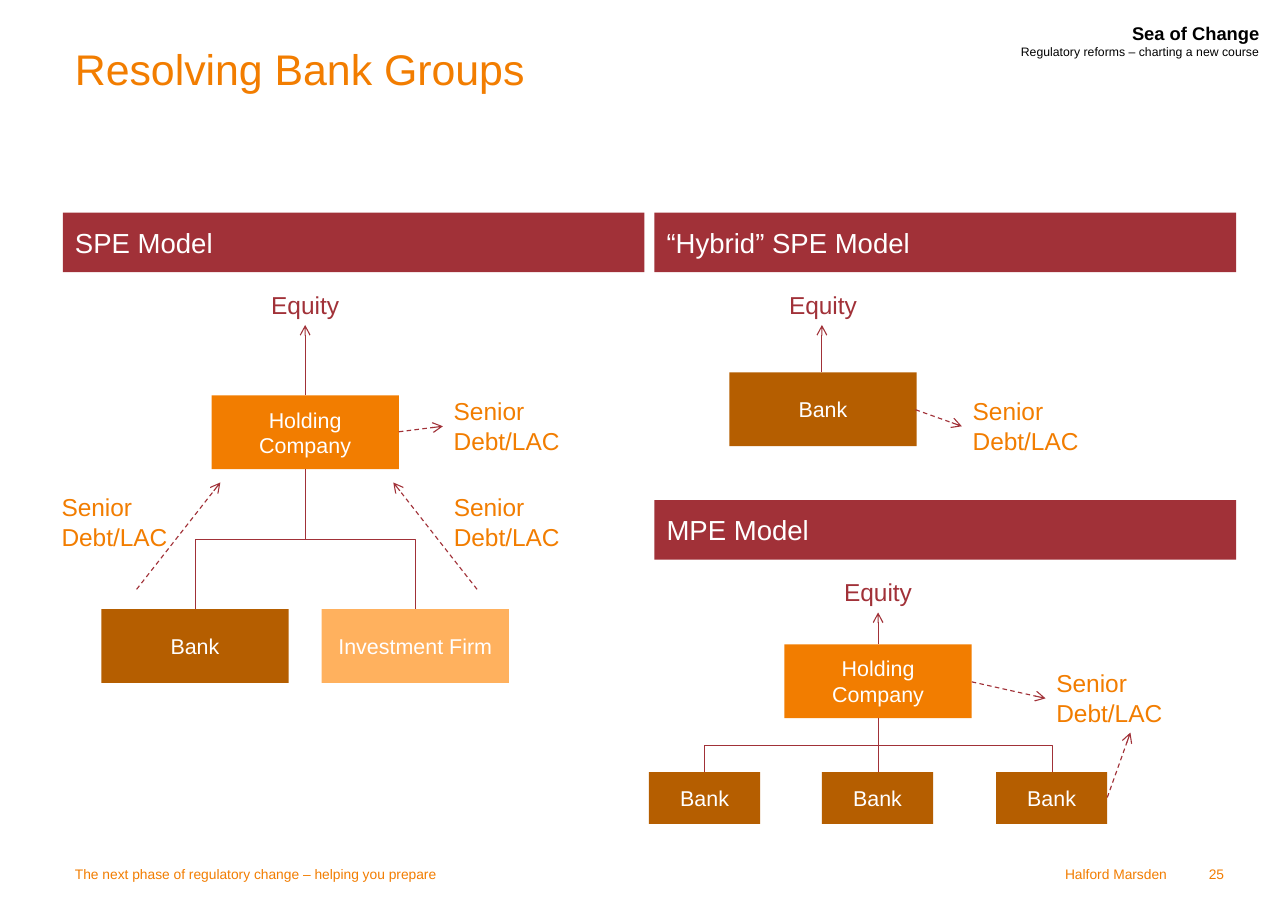
from dataclasses import dataclass

import lxml.etree
import pptx
import pptx.dml.color
import pptx.enum.dml
import pptx.enum.shapes
import pptx.enum.text
import pptx.oxml.ns
import pptx.util

Inches = pptx.util.Inches
RGBColor = pptx.dml.color.RGBColor
Align = pptx.enum.text.PP_ALIGN
Anchor = pptx.enum.text.MSO_ANCHOR
Connector = pptx.enum.shapes.MSO_CONNECTOR
qualified = pptx.oxml.ns.qn

ORANGE = RGBColor(0xF2, 0x7D, 0x00)
LIGHT_ORANGE = RGBColor(0xFF, 0xB1, 0x5E)
BROWN = RGBColor(0xB5, 0x5E, 0x00)
RED = RGBColor(0xA1, 0x31, 0x38)
WHITE = RGBColor(0xFF, 0xFF, 0xFF)
BLACK = RGBColor(0x00, 0x00, 0x00)

FONT = "Arial"
ENTITY_WIDTH, ENTITY_HEIGHT = 1.7, 0.67
BRANCH_WIDTH, BRANCH_HEIGHT = 1.01, 0.47


@dataclass(frozen=True)
class Label:
    text: str
    left: float
    top: float
    width: float
    height: float
    size: float
    color: RGBColor
    align: Align = Align.LEFT
    anchor: Anchor = Anchor.TOP
    inset_x: float = 0.1
    inset_y: float = 0.05
    bold: bool = False
    subtitle: str = ""


@dataclass(frozen=True)
class Box:
    text: str
    left: float
    top: float
    fill: RGBColor
    width: float = ENTITY_WIDTH
    height: float = ENTITY_HEIGHT
    size: float = 14
    align: Align = Align.CENTER
    inset_x: float = 0.1
    inset_y: float = 0.05


@dataclass(frozen=True)
class Link:
    x1: float
    y1: float
    x2: float
    y2: float
    dashed: bool = False
    arrow: bool = True
    width: float = 0.75


def heading(text: str, left: float, top: float) -> Box:
    return Box(text, left, top, RED, 5.28, 0.54, 18, Align.LEFT, 0.11, 0.06)


def branch(left: float) -> Box:
    return Box("Bank", left, 7.01, BROWN, BRANCH_WIDTH, BRANCH_HEIGHT)


def equity(left: float, top: float) -> Label:
    return Label("Equity", left, top, 1.74, 0.37, 16, RED, Align.CENTER)


def senior_debt(left: float, top: float, width: float) -> Label:
    return Label("Senior Debt/LAC", left, top, width, 0.64, 16, ORANGE)


def footer(text: str, left: float, width: float, align: Align) -> Label:
    return Label(text, left, 7.76, width, 0.35, 9, ORANGE, align, Anchor.MIDDLE, 0.11, 0.06)


LABELS = [
    Label("Sea of Change", 8.98, 0.15, 2.55, 0.44, 12, BLACK, Align.RIGHT, bold=True,
          subtitle="Regulatory reforms – charting a new course"),
    Label("Resolving Bank Groups", 0.57, 0.33, 10.54, 1.38, 28, ORANGE,
          inset_x=0.11, inset_y=0.06),
    footer("The next phase of regulatory change – helping you prepare", 0.57, 7.51, Align.LEFT),
    footer("Halford Marsden", 8.08, 2.62, Align.RIGHT),
    footer("25", 10.7, 0.52, Align.RIGHT),
    equity(1.9, 2.58),
    equity(6.6, 2.58),
    equity(7.1, 5.19),
    senior_debt(4.02, 3.55, 1.36),
    senior_debt(4.02, 4.42, 1.28),
    senior_debt(0.46, 4.42, 1.28),
    senior_debt(8.73, 3.55, 1.68),
    senior_debt(9.49, 6.02, 1.73),
]

BOXES = [
    heading("SPE Model", 0.57, 1.93),
    heading("“Hybrid” SPE Model", 5.94, 1.93),
    heading("MPE Model", 5.94, 4.54),
    Box("Holding Company", 1.92, 3.59, ORANGE),
    Box("Bank", 0.92, 5.53, BROWN),
    Box("Investment Firm", 2.92, 5.53, LIGHT_ORANGE),
    Box("Bank", 6.62, 3.38, BROWN),
    Box("Holding Company", 7.12, 5.85, ORANGE),
    *(branch(left) for left in (5.89, 7.46, 9.04)),
]

ARROWS = [
    Link(2.77, 3.59, 2.77, 2.95),
    Link(7.46, 3.38, 7.46, 2.95),
    Link(7.97, 5.85, 7.97, 5.56),
    Link(3.62, 3.92, 4.02, 3.87, dashed=True),
    Link(4.33, 5.35, 3.57, 4.38, dashed=True),
    Link(1.24, 5.35, 2, 4.38, dashed=True),
    Link(8.31, 3.72, 8.73, 3.87, dashed=True),
    Link(8.82, 6.19, 9.49, 6.34, dashed=True),
    Link(10.05, 7.24, 10.26, 6.65, dashed=True),
]

OWNERSHIP = [
    *(Link(2.77, 4.26, x, 5.53, arrow=False, width=0.5) for x in (1.77, 3.77)),
    *(Link(7.97, 6.52, x, 7.01, arrow=False, width=0.5) for x in (6.39, 7.97, 9.55)),
]


def add_run(paragraph, text: str, size: float, color: RGBColor, bold: bool = False) -> None:
    run = paragraph.add_run()
    run.text = text
    run.font.name = FONT
    run.font.size = pptx.util.Pt(size)
    run.font.bold = bold
    run.font.color.rgb = color


def prepare_text(shape, anchor: Anchor, align: Align, inset_x: float, inset_y: float):
    frame = shape.text_frame
    frame.word_wrap = True
    frame.vertical_anchor = anchor
    frame.margin_left = frame.margin_right = Inches(inset_x)
    frame.margin_top = frame.margin_bottom = Inches(inset_y)
    paragraph = frame.paragraphs[0]
    paragraph.alignment = align
    return paragraph


def add_label(slide, label: Label) -> None:
    shape = slide.shapes.add_textbox(Inches(label.left), Inches(label.top),
                                     Inches(label.width), Inches(label.height))
    paragraph = prepare_text(shape, label.anchor, label.align, label.inset_x, label.inset_y)
    add_run(paragraph, label.text, label.size, label.color, label.bold)
    if label.subtitle:
        paragraph.add_line_break()
        add_run(paragraph, label.subtitle, 8, label.color)


def add_box(slide, box: Box) -> None:
    shape = slide.shapes.add_shape(pptx.enum.shapes.MSO_SHAPE.RECTANGLE,
                                   Inches(box.left), Inches(box.top),
                                   Inches(box.width), Inches(box.height))
    shape.shadow.inherit = False
    shape.fill.solid()
    shape.fill.fore_color.rgb = box.fill
    shape.line.fill.background()
    paragraph = prepare_text(shape, Anchor.MIDDLE, box.align, box.inset_x, box.inset_y)
    add_run(paragraph, box.text, box.size, WHITE)


def add_link(slide, link: Link, kind: Connector = Connector.STRAIGHT):
    connector = slide.shapes.add_connector(kind, Inches(link.x1), Inches(link.y1),
                                           Inches(link.x2), Inches(link.y2))
    connector.line.color.rgb = RED
    connector.line.width = pptx.util.Pt(link.width)
    if link.dashed:
        connector.line.dash_style = pptx.enum.dml.MSO_LINE.DASH
    properties = connector._element.spPr
    if link.arrow:
        outline = properties.find(qualified("a:ln"))
        lxml.etree.SubElement(outline, qualified("a:tailEnd"), type="arrow")
    lxml.etree.SubElement(properties, qualified("a:effectLst"))
    return connector


def add_ownership(slide, link: Link) -> None:
    if link.x1 == link.x2:
        add_link(slide, link)
        return
    center_x, center_y = (link.x1 + link.x2) / 2, (link.y1 + link.y2) / 2
    half_x, half_y = (link.x2 - link.x1) / 2, (link.y2 - link.y1) / 2
    turned = Link(center_x - half_y, center_y + half_x, center_x + half_y, center_y - half_x,
                  arrow=False, width=link.width)
    connector = add_link(slide, turned, Connector.ELBOW)
    connector._element.spPr.find(qualified("a:xfrm")).set("rot", "5400000")


def main() -> None:
    presentation = pptx.Presentation()
    presentation.slide_width = Inches(11.69)
    presentation.slide_height = Inches(8.27)
    slide = presentation.slides.add_slide(presentation.slide_layouts[6])
    for box in BOXES:
        add_box(slide, box)
    for label in LABELS:
        add_label(slide, label)
    for link in OWNERSHIP:
        add_ownership(slide, link)
    for arrow in ARROWS:
        add_link(slide, arrow)
    presentation.save("out.pptx")


if __name__ == "__main__":
    main()
